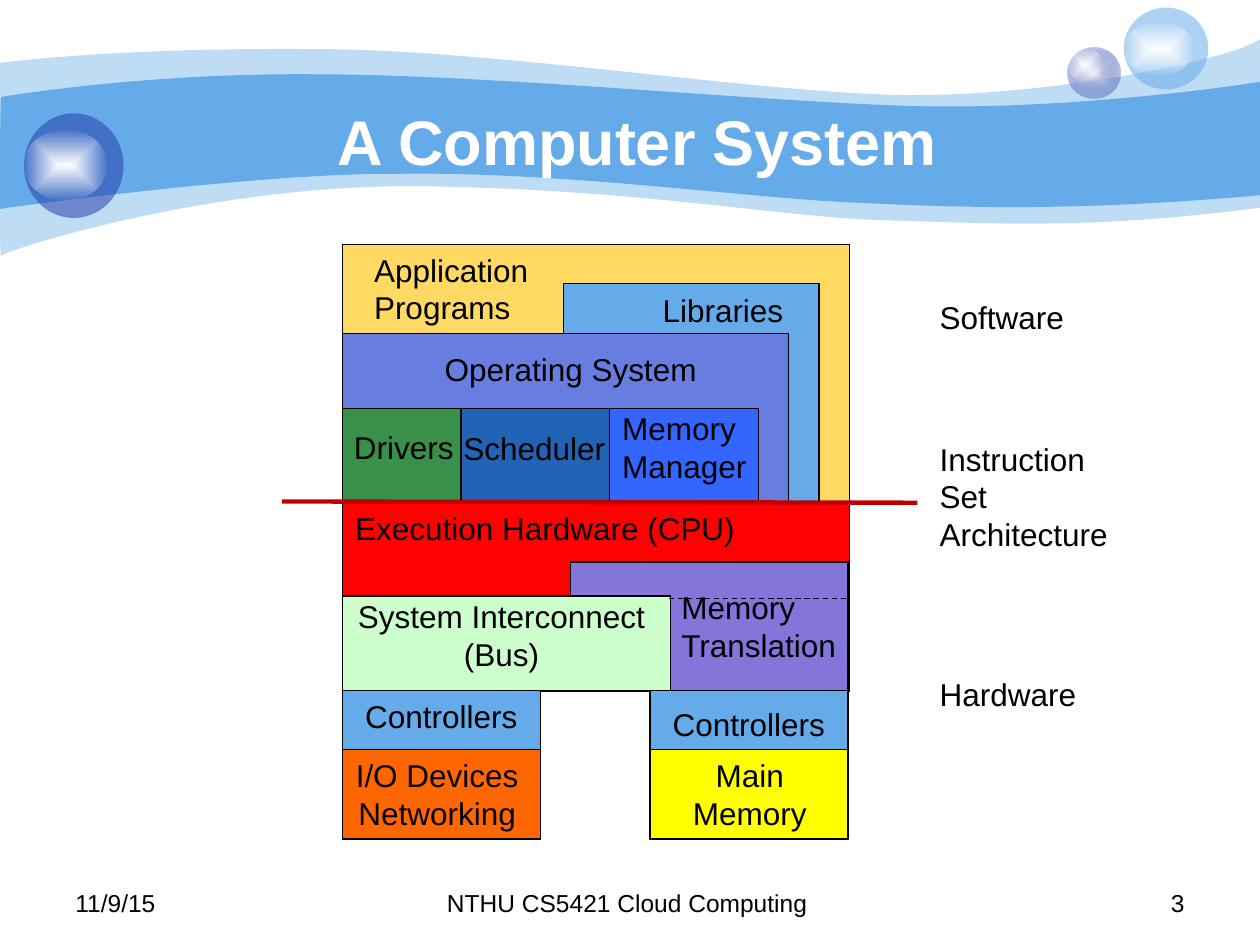
from dataclasses import dataclass

from lxml import etree
from pptx import Presentation
from pptx import oxml
from pptx.dml import color
from pptx.enum import dml, shapes, text
from pptx.oxml import ns
from pptx.util import Inches, Pt


@dataclass(frozen=True)
class Theme:
    font: str = "Arial"
    title_size: int = 36
    label_size: int = 18
    footer_size: int = 14
    black: str = "000000"
    white: str = "FFFFFF"
    sky: str = "65AAE9"
    navy: str = "233DA9"
    mist: str = "E1E2ED"
    divider: str = "C00000"
    applications: str = "FFD961"
    operating_system: str = "677EE0"
    cpu: str = "FF0101"
    translation: str = "8375D9"
    bus: str = "CCFFCC"
    devices: str = "FF6600"
    main_memory: str = "FFFF00"
    manager: str = "3366FF"
    scheduler: str = "2163B4"
    drivers: str = "389049"


THEME = Theme()
LEFT, RIGHT = 2.72, 6.74
LEFT_ALIGN, CENTER, RIGHT_ALIGN = (
    text.PP_ALIGN.LEFT, text.PP_ALIGN.CENTER, text.PP_ALIGN.RIGHT)

PALE_WAVE = [
    [(0, 0.5)],
    [(0.24, 0.47), (1.07, 0.38), (2.47, 0.39)],
    [(3.86, 0.39), (5.75, 0.7), (6.99, 0.75)],
    [(8.22, 0.8), (9.8, 0.47), (10, 0.31)],
    [(10, 1.65)],
    [(8.58, 1.83), (7.87, 1.77), (7.05, 1.75)],
    [(6.22, 1.73), (5.15, 1.51), (3.43, 1.48)],
    [(1.72, 1.44), (0.04, 1.99), (0.01, 2.03)],
    [(-0.01, 2.08), (0, 0.75), (0, 0.5)],
]
DEEP_WAVE = [
    [(0.01, 0.77)],
    [(0.02, 0.77), (1.1, 0.58), (2.48, 0.59)],
    [(3.86, 0.59), (5.95, 0.8), (7.18, 0.84)],
    [(8.41, 0.88), (9.76, 0.69), (10, 0.65)],
    [(10, 1.55)],
    [(8.53, 1.68), (7.65, 1.65), (6.82, 1.61)],
    [(5.99, 1.58), (4.47, 1.36), (3.17, 1.38)],
    [(2.03, 1.37), (-0.02, 1.66), (-0.01, 1.66)],
    [(0, 1.66), (0, 0.77), (0.01, 0.77)],
]


def rgb(value):
    return color.RGBColor.from_string(value)


def inches(*values):
    return [Inches(value) for value in values]


def fill_solid(shape, fill, opacity=100):
    shape.shadow.inherit = False
    shape.fill.solid()
    shape.fill.fore_color.rgb = rgb(fill)
    if opacity < 100:
        tint = shape._element.spPr.find(".//" + ns.qn("a:srgbClr"))
        etree.SubElement(tint, ns.qn("a:alpha"), val=str(opacity * 1000))


def fill_radial(shape, inner, outer, outer_opacity):
    shape.shadow.inherit = False
    gradient = oxml.parse_xml(
        f'<a:gradFill {ns.nsdecls("a")} rotWithShape="1"><a:gsLst>'
        f'<a:gs pos="0"><a:srgbClr val="{inner}"/></a:gs>'
        f'<a:gs pos="100000"><a:srgbClr val="{outer}">'
        f'<a:alpha val="{outer_opacity * 1000}"/></a:srgbClr></a:gs></a:gsLst>'
        '<a:path path="shape"><a:fillToRect l="50000" t="50000" r="50000" b="50000"/>'
        '</a:path></a:gradFill>')
    shape._element.spPr.find(ns.qn("a:prstGeom")).addnext(gradient)


def bend_segments(shape, segments):
    lines = iter(list(shape._element.iter(ns.qn("a:lnTo"))))
    for segment in segments:
        group = [next(lines) for _ in segment]
        if len(group) == 3:
            curve = etree.Element(ns.qn("a:cubicBezTo"))
            group[0].addprevious(curve)
            for line in group:
                curve.append(line[0])
                line.getparent().remove(line)


def add_wave(slide, outline, opacity=100):
    (start,), *segments = outline
    builder = slide.shapes.build_freeform(*inches(*start))
    builder.add_line_segments(
        [inches(*point) for segment in segments for point in segment], close=True)
    shape = builder.convert_to_shape()
    bend_segments(shape, segments)
    fill_solid(shape, THEME.sky, opacity)
    shape.line.fill.background()


def add_ellipse(group, box):
    shape = group.shapes.add_shape(shapes.MSO_SHAPE.OVAL, *inches(*box))
    shape.line.fill.background()
    return shape


def add_bubble(slide, box, highlight_box):
    group = slide.shapes.add_group_shape()
    bubble = add_ellipse(group, box)
    fill_radial(add_ellipse(group, highlight_box), THEME.white, THEME.white, 0)
    return bubble


def add_background(slide):
    add_wave(slide, PALE_WAVE, 41)
    add_wave(slide, DEEP_WAVE)
    small = add_bubble(slide, (8.47, 0.38, 0.42, 0.4), (8.47, 0.38, 0.28, 0.27))
    fill_radial(small, THEME.mist, THEME.navy, 31)
    light = add_bubble(slide, (8.92, 0.06, 0.67, 0.65), (8.92, 0.17, 0.56, 0.43))
    fill_solid(light, THEME.sky, 53)
    dark = add_bubble(slide, (0.19, 0.9, 0.79, 0.83), (0.19, 1.03, 0.66, 0.56))
    fill_solid(dark, THEME.navy, 53)


def format_text(frame, size, ink, align, bold=False):
    for paragraph in frame.paragraphs:
        paragraph.alignment = align
        for run in paragraph.runs:
            run.font.name = THEME.font
            run.font.size = Pt(size)
            run.font.bold = bold
            run.font.color.rgb = rgb(ink)


def add_title(slide, wording):
    title = slide.shapes.title
    title.left, title.top, title.width, title.height = inches(1.06, 0.68, 8, 0.87)
    title.text_frame.text = wording
    title.text_frame.vertical_anchor = text.MSO_ANCHOR.MIDDLE
    format_text(title.text_frame, THEME.title_size, THEME.white, CENTER, bold=True)
    slide.shapes._spTree.append(title._element)


def add_label(parent, wording, box, align=LEFT_ALIGN, size=THEME.label_size):
    frame = parent.shapes.add_textbox(*inches(*box)).text_frame
    frame.word_wrap = True
    frame.text = wording
    format_text(frame, size, THEME.black, align)
    return frame


def add_block(group, fill, left, top, right, bottom):
    shape = group.shapes.add_shape(
        shapes.MSO_SHAPE.RECTANGLE, *inches(left, top, right - left, bottom - top))
    fill_solid(shape, fill)
    shape.line.color.rgb = rgb(THEME.black)
    shape.line.width = Pt(0.75)


def add_line(parent, start, end, ink, width, dashed=False):
    line = parent.shapes.add_connector(
        shapes.MSO_CONNECTOR.STRAIGHT, *inches(*start, *end))
    line.line.color.rgb = rgb(ink)
    line.line.width = Pt(width)
    if dashed:
        line.line.dash_style = dml.MSO_LINE.DASH
    etree.SubElement(line._element.spPr, ns.qn("a:effectLst"))


def add_system(slide):
    group = slide.shapes.add_group_shape()
    for block in (
        (THEME.applications, LEFT, 1.94, RIGHT, 3.99),
        (THEME.sky, 4.47, 2.25, 6.5, 3.98),
        (THEME.operating_system, LEFT, 2.65, 6.26, 3.99),
        (THEME.cpu, LEFT, 3.99, RIGHT, 5.49),
        (THEME.translation, 4.53, 4.46, 6.73, 5.48),
        (THEME.bus, LEFT, 4.73, 5.32, 5.48),
        (THEME.sky, LEFT, 5.48, 4.29, 5.95),
        (THEME.devices, LEFT, 5.95, 4.29, 6.66),
        (THEME.sky, 5.16, 5.48, 6.73, 6.66),
        (THEME.main_memory, 5.16, 5.95, 6.73, 6.66),
        (THEME.manager, 2.87, 3.24, 6.02, 3.99),
        (THEME.scheduler, 3.03, 3.24, 4.84, 3.98),
        (THEME.drivers, LEFT, 3.24, 3.66, 3.99),
    ):
        add_block(group, *block)
    for label in (
        ("Application Programs", (2.87, 1.94, 1.59, 0.71)),
        ("Libraries", (5.16, 2.26, 1.59, 0.4)),
        ("Operating System", (3.43, 2.73, 2.68, 0.4)),
        ("Drivers", (2.71, 3.35, 1.11, 0.4)),
        ("Memory\nManager", (4.84, 3.2, 1.27, 0.71)),
        ("Scheduler", (3.58, 3.36, 1.5, 0.4)),
        ("Execution Hardware (CPU)", (LEFT, 3.99, 3.46, 0.4)),
        ("Memory\nTranslation", (5.31, 4.62, 1.5, 0.71)),
        ("System Interconnect\n(Bus)", (LEFT, 4.69, 2.52, 0.71), CENTER),
        ("Controllers", (2.8, 5.48, 1.42, 0.4)),
        ("Controllers", (5.24, 5.55, 1.42, 0.4)),
        ("Main\nMemory", (5.24, 5.95, 1.42, 0.71), CENTER),
        ("I/O Devices\nNetworking", (LEFT, 5.95, 1.5, 0.71), CENTER),
        ("Instruction Set Architecture", (7.36, 3.44, 1.65, 1.01)),
        ("Software", (7.36, 2.32, 1.34, 0.4)),
        ("Hardware", (7.36, 5.31, 1.34, 0.4)),
    ):
        add_label(group, *label).auto_size = text.MSO_AUTO_SIZE.SHAPE_TO_FIT_TEXT
    add_line(group, (2.24, 3.98), (7.28, 3.99), THEME.divider, 2.5)
    add_line(slide, (5.31, 4.75), (6.73, 4.75), THEME.black, 0.75, dashed=True)


def add_footer(slide):
    for wording, left, width, align in (
        ("11/9/15", 0.5, 2.33, LEFT_ALIGN),
        ("3", 7.17, 2.33, RIGHT_ALIGN),
        ("NTHU CS5421 Cloud Computing ", 3.42, 3.17, CENTER),
    ):
        add_label(slide, wording, (left, 7, width, 0.35), align, THEME.footer_size)


def main():
    presentation = Presentation()
    presentation.slide_width, presentation.slide_height = inches(10, 7.5)
    slide = presentation.slides.add_slide(presentation.slide_layouts[5])
    add_background(slide)
    add_title(slide, "A Computer System")
    add_footer(slide)
    add_system(slide)
    presentation.save("out.pptx")


if __name__ == "__main__":
    main()
